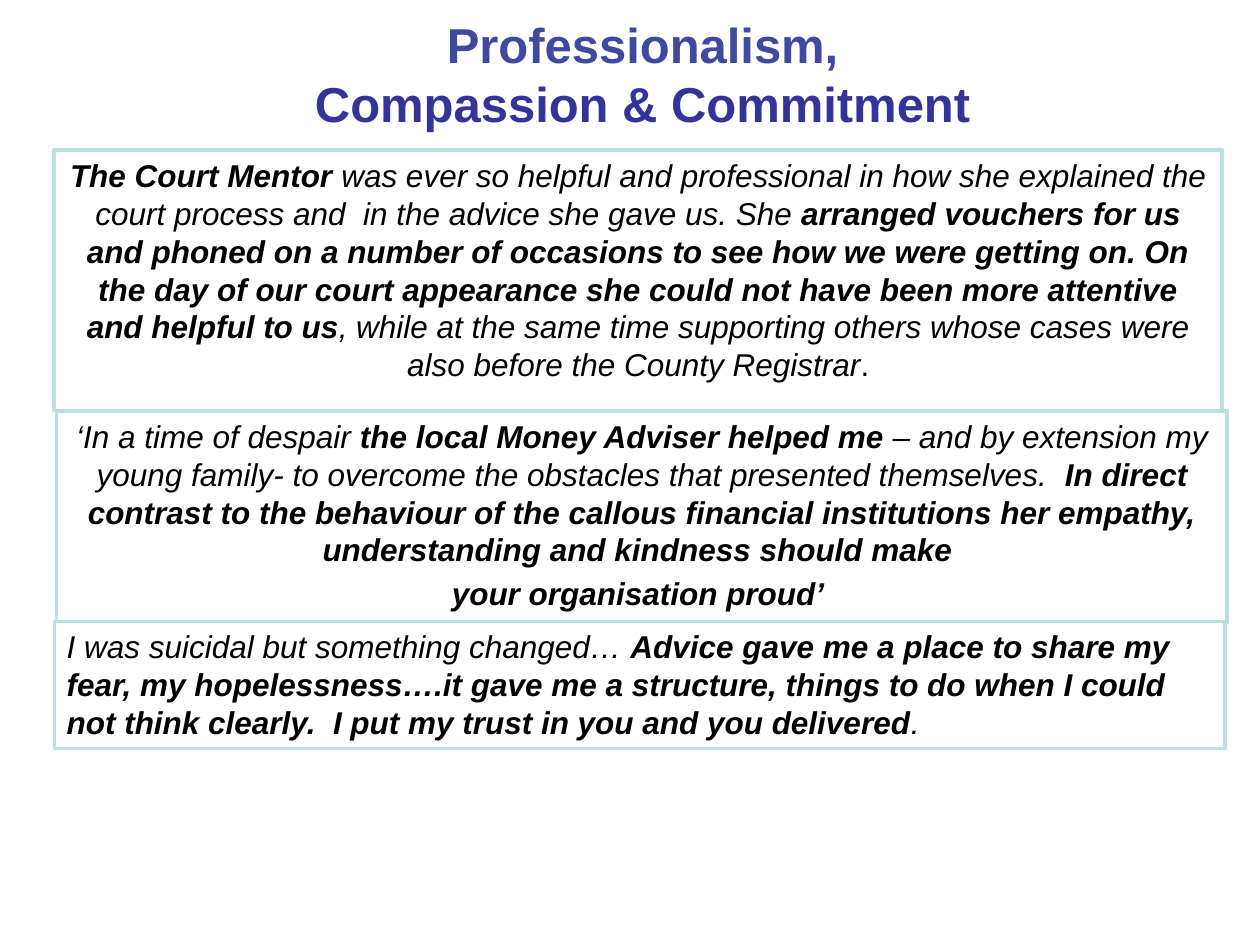
"""Build a slide of three client testimonials under a two-line title."""
from pptx import Presentation
from pptx.dml.color import RGBColor
from pptx.enum.shapes import MSO_SHAPE
from pptx.enum.text import MSO_ANCHOR, PP_ALIGN
from pptx.util import Pt

RECT = MSO_SHAPE.RECTANGLE
TOP, MIDDLE = MSO_ANCHOR.TOP, MSO_ANCHOR.MIDDLE
LEFT, CENTER = PP_ALIGN.LEFT, PP_ALIGN.CENTER
COLORS = {"title1": "3F499F", "title2": "333399", "text": "000000",
          "fill": "FFFFFF", "line": "BBE0E3"}

TITLE = [("Professionalism,", "title1"), ("Compassion & Commitment", "title2")]
TITLE_BOX = (61.2, -2.9, 612, 90)

QUOTES = [
    ((31, 85.7, 667.4, 149), CENTER, [[
        ("The Court Mentor ", True, True),
        ("was ever so helpful and professional in how she explained the court "
         "process and  in the advice she gave us. She ", False, True),
        ("arranged vouchers for us and phoned on a number of occasions to see how "
         "we were getting on. On the day of our court appearance she could not have "
         "been more attentive and helpful to us", True, True),
        (", while at the same time supporting others whose cases were also before "
         "the County Registrar", False, True),
        (".", False, False)]]),
    ((32.4, 234.7, 668.9, 121), CENTER, [[
        ("‘In a time of despair ", False, True),
        ("the local Money Adviser helped me ", True, True),
        ("– and by extension my young family- to overcome the obstacles that "
         "presented themselves.  ", False, True),
        ("In direct contrast to the behaviour of the callous financial institutions "
         "her empathy, understanding and kindness should make ", True, True)],
        [("your organisation proud’ ", True, True)]]),
    ((31, 355, 668.9, 72.7), LEFT, [[
        ("I was suicidal but something changed… ", False, True),
        ("Advice gave me a place to share my fear, my hopelessness….it gave me a "
         "structure, things to do when I could not think clearly.  I put my trust "
         "in you and you delivered", True, True),
        (".", False, True)]]),
]


def color(name):
    return RGBColor.from_string(COLORS[name])


def set_frame(s, anchor):
    tf = s.text_frame
    tf.word_wrap = True
    tf.vertical_anchor = anchor
    return tf


def set_font(p, size):
    p.font.name = "Arial"
    p.font.size = Pt(size)


def add_title(slide):
    tf = set_frame(slide.shapes.add_textbox(*map(Pt, TITLE_BOX)), MIDDLE)
    p = tf.paragraphs[0]
    p.alignment = CENTER
    set_font(p, 28)
    p.font.bold = True
    for i, (text, name) in enumerate(TITLE):
        if i:
            p.add_line_break()
        r = p.add_run()
        r.text = text
        r.font.color.rgb = color(name)


def add_quote(slide, box, align, paragraphs):
    s = slide.shapes.add_shape(RECT, *map(Pt, box))
    s.shadow.inherit = False
    s.fill.solid()
    s.fill.fore_color.rgb = color("fill")
    s.line.color.rgb = color("line")
    s.line.width = Pt(2)
    tf = set_frame(s, TOP)
    for i, runs in enumerate(paragraphs):
        p = tf.add_paragraph() if i else tf.paragraphs[0]
        p.alignment = align
        if i:
            p.space_before = Pt(3.6)
        set_font(p, 18)
        p.font.color.rgb = color("text")
        for text, bold, italic in runs:
            r = p.add_run()
            r.text = text
            r.font.bold, r.font.italic = bold, italic


def main():
    prs = Presentation()
    prs.slide_width, prs.slide_height = Pt(720), Pt(540)
    slide = prs.slides.add_slide(prs.slide_layouts[6])
    add_title(slide)
    for quote in QUOTES:
        add_quote(slide, *quote)
    prs.save("out.pptx")


if __name__ == "__main__":
    main()
